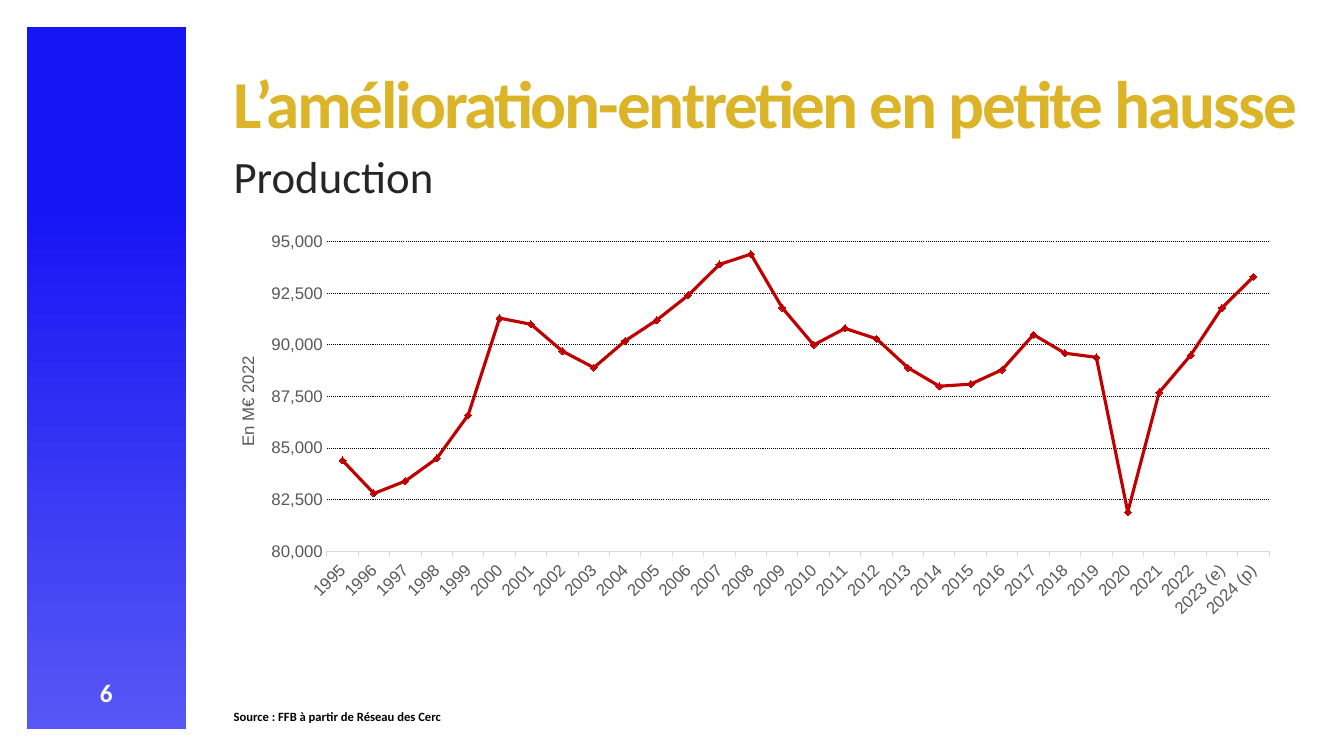
from dataclasses import dataclass
from typing import Any, Optional

from lxml import etree
from pptx import Presentation
from pptx.chart.data import CategoryChartData
from pptx.dml.color import RGBColor
from pptx.enum.chart import XL_CHART_TYPE, XL_MARKER_STYLE, XL_TICK_MARK
from pptx.enum.dml import MSO_LINE
from pptx.enum.shapes import MSO_SHAPE
from pptx.enum.text import MSO_ANCHOR, PP_ALIGN
from pptx.oxml.ns import qn
from pptx.util import Pt

LEFT, CENTER = PP_ALIGN.LEFT, PP_ALIGN.CENTER
TOP = MSO_ANCHOR.TOP
LINE_MARKERS = XL_CHART_TYPE.LINE_MARKERS
DIAMOND = XL_MARKER_STYLE.DIAMOND
TICK_NONE, TICK_OUT = XL_TICK_MARK.NONE, XL_TICK_MARK.OUTSIDE
DOTTED = MSO_LINE.ROUND_DOT
RECT = MSO_SHAPE.RECTANGLE

BLUE = RGBColor(0x16, 0x15, 0xF5)
LIGHT_BLUE = RGBColor(0x57, 0x57, 0xF5)
GOLD = RGBColor(0xDB, 0xB4, 0x28)
DARK = RGBColor(0x26, 0x26, 0x26)
GREY = RGBColor(0x59, 0x59, 0x59)
PALE_GREY = RGBColor(0xD9, 0xD9, 0xD9)
BLACK = RGBColor(0, 0, 0)
WHITE = RGBColor(0xFF, 0xFF, 0xFF)
RED = RGBColor(0xC0, 0, 0)

YEARS = [str(year) for year in range(1995, 2023)] + ["2023 (e)", "2024 (p)"]
PRODUCTION = [
    84400, 82800, 83400, 84500, 86600, 91300, 91000, 89700, 88900, 90200,
    91200, 92400, 93900, 94400, 91800, 90000, 90800, 90300, 88900, 88000,
    88100, 88800, 90500, 89600, 89400, 81900, 87700, 89500, 91800, 93300,
]


@dataclass
class Label:
    text: str
    x: float
    y: float
    w: float
    h: float
    size: float
    color: RGBColor
    bold: bool = True
    align: Any = LEFT
    line_spacing: float = 0.9
    tracking: Optional[int] = None
    wrap: bool = True


LABELS = [
    Label("6", 19.4, 480.2, 113, 28.8, 18, WHITE, align=CENTER, line_spacing=1.0),
    Label("L’amélioration-entretien en petite hausse", 159.8, 46.8, 774.7, 59.8,
          48, GOLD, tracking=-150, wrap=False),
    Label("Production", 159.8, 107.3, 767.5, 36, 32, DARK, bold=False),
    Label("Source : FFB à partir de Réseau des Cerc", 159.8, 504, 646.6, 17.3,
          9, BLACK),
]


def set_format(target: Any, values: dict[str, Any]) -> None:
    for name, value in values.items():
        setattr(target, name, value)


def set_font(font: Any, name: str, size: float, color: RGBColor,
             bold: bool = False) -> None:
    set_format(font, {"name": name, "size": Pt(size), "bold": bold})
    font.color.rgb = color


def set_line(line: Any, color: RGBColor, width: float) -> None:
    line.color.rgb = color
    line.width = Pt(width)


def add_label(s: Any, label: Label) -> None:
    box = s.shapes.add_textbox(Pt(label.x), Pt(label.y), Pt(label.w), Pt(label.h))
    tf = box.text_frame
    set_format(tf, {"word_wrap": label.wrap, "vertical_anchor": TOP})
    p = tf.paragraphs[0]
    set_format(p, {"alignment": label.align, "line_spacing": label.line_spacing})
    r = p.add_run()
    r.text = label.text
    set_font(r.font, "Calibri", label.size, label.color, label.bold)
    if label.tracking is not None:
        r.font._element.set("spc", str(label.tracking))


def set_layout(parent: Any, index: int, values: dict[str, Any]) -> None:
    layout = parent.find(qn("c:layout"))
    if layout is None:
        layout = etree.Element(qn("c:layout"))
        parent.insert(index, layout)
    manual = etree.SubElement(layout, qn("c:manualLayout"))
    for name, value in values.items():
        etree.SubElement(manual, qn(f"c:{name}")).set("val", str(value))


def add_band(s: Any) -> None:
    band = s.shapes.add_shape(RECT, Pt(19.4), Pt(19.4), Pt(113.8), Pt(501.1))
    band.shadow.inherit = False
    band.line.fill.background()
    band.fill.gradient()
    band.fill.gradient_angle = 270
    stops = ((0.25, BLUE), (1.0, LIGHT_BLUE))
    for stop, (position, color) in zip(band.fill.gradient_stops, stops):
        stop.position = position
        stop.color.rgb = color


def add_production_chart(s: Any) -> None:
    data = CategoryChartData(number_format="#,##0")
    data.categories = YEARS
    data.add_series("Production", PRODUCTION)
    chart = s.shapes.add_chart(LINE_MARKERS, Pt(159.8), Pt(157.7), Pt(767.5),
                               Pt(295.2), data).chart
    set_format(chart, {"has_legend": False, "has_title": False})
    set_font(chart.font, "Calibri", 10, BLACK)
    plot = chart.plots[0]
    plot.vary_by_categories = False

    # Series
    series = plot.series[0]
    series.smooth = False
    set_line(series.format.line, RED, 2.25)
    set_format(series.marker, {"style": DIAMOND, "size": 5})
    series.marker.format.fill.solid()
    series.marker.format.fill.fore_color.rgb = RED
    set_line(series.marker.format.line, RED, 0.75)

    # Axes
    years, values = chart.category_axis, chart.value_axis
    for axis in (years, values):
        set_font(axis.tick_labels.font, "Arial", 12, GREY)
    set_format(years, {"major_tick_mark": TICK_OUT, "minor_tick_mark": TICK_NONE,
                       "has_major_gridlines": False})
    set_line(years.format.line, PALE_GREY, 0.75)
    years._element.find(qn("c:txPr")).find(qn("a:bodyPr")).set("rot", "-2700000")
    set_format(values, {"minimum_scale": 80000, "maximum_scale": 95000,
                        "major_unit": 2500, "major_tick_mark": TICK_NONE,
                        "minor_tick_mark": TICK_NONE,
                        "has_major_gridlines": True})
    set_format(values.tick_labels, {"number_format": "#,##0",
                                    "number_format_is_linked": False})
    values.format.line.fill.background()
    grid = values.major_gridlines.format.line
    set_line(grid, BLACK, 0.75)
    grid.dash_style = DOTTED

    # Axis title
    title = values.axis_title
    tf = title.text_frame
    tf._txBody.find(qn("a:bodyPr")).set("rot", "-5400000")
    r = tf.paragraphs[0].add_run()
    r.text = "En M€ 2022"
    set_font(r.font, "Arial", 12, GREY)

    # Placement inside the chart
    set_layout(title._element, 1,
               {"xMode": "edge", "yMode": "edge", "x": 0.01, "y": 0.32})
    set_layout(chart._chartSpace.chart.plotArea, 0,
               {"layoutTarget": "inner", "xMode": "edge", "yMode": "edge",
                "x": 0.096, "y": 0.051, "w": 0.877, "h": 0.749})


def main() -> None:
    prs = Presentation()
    set_format(prs, {"slide_width": Pt(960), "slide_height": Pt(540)})
    s = prs.slides.add_slide(prs.slide_layouts[6])
    add_band(s)
    for label in LABELS:
        add_label(s, label)
    add_production_chart(s)
    prs.save("out.pptx")


if __name__ == "__main__":
    main()
